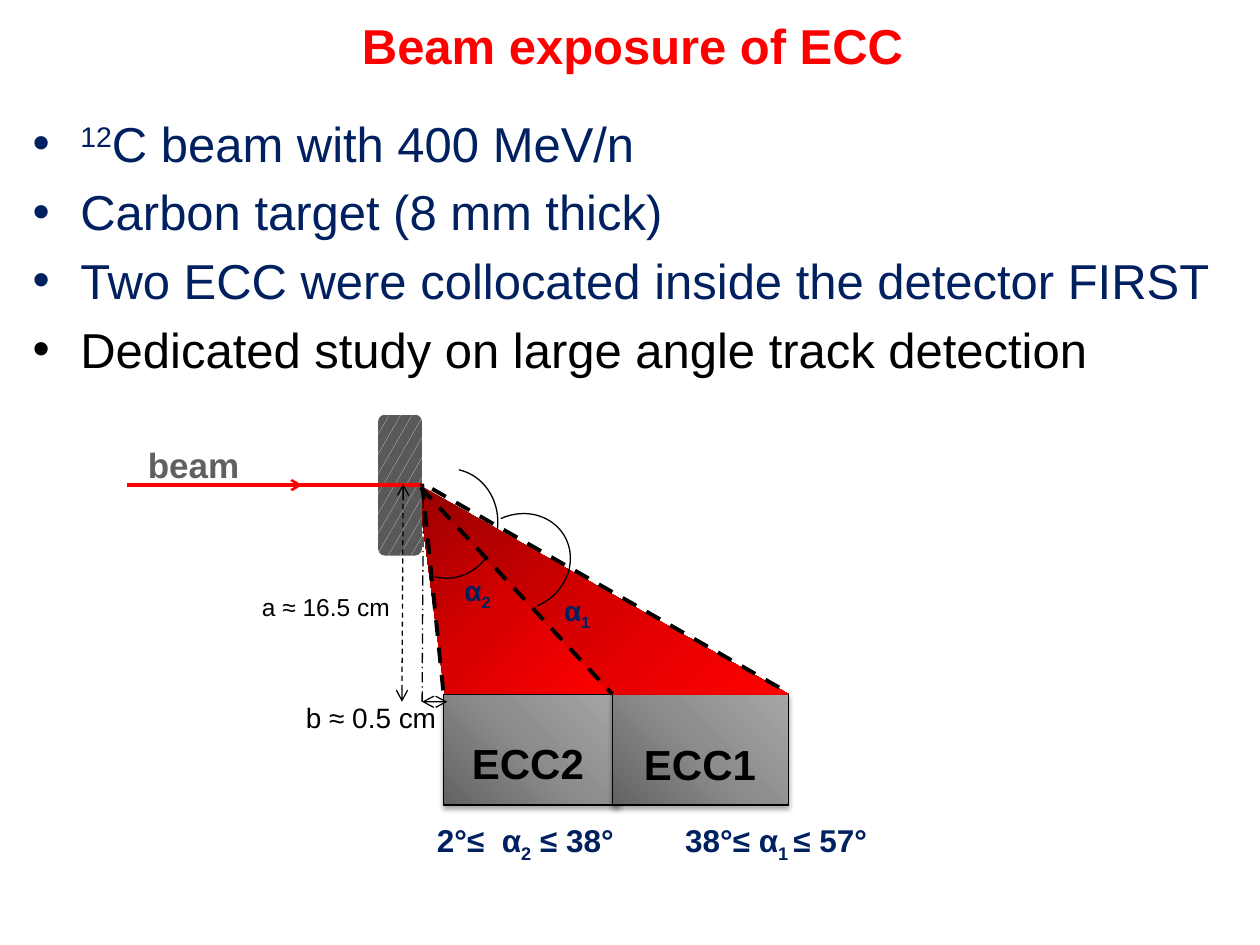
from lxml import etree
from pptx import Presentation
from pptx.dml.color import RGBColor
from pptx.enum.dml import MSO_LINE, MSO_PATTERN
from pptx.enum.shapes import MSO_CONNECTOR, MSO_SHAPE
from pptx.enum.text import MSO_ANCHOR, MSO_AUTO_SIZE, PP_ALIGN
from pptx.oxml import parse_xml
from pptx.oxml.ns import nsdecls, qn
from pptx.util import Inches, Pt

RED = RGBColor(0xFF, 0x00, 0x00)
NAVY = RGBColor(0x00, 0x20, 0x60)
BLACK = RGBColor(0x00, 0x00, 0x00)
LABEL_GRAY = RGBColor(0x60, 0x60, 0x60)
TARGET_DARK = RGBColor(0x59, 0x59, 0x59)
TARGET_LIGHT = RGBColor(0xD9, 0xD9, 0xD9)
RED_STOPS = (RGBColor(0x97, 0, 0), RGBColor(0xD7, 0, 0), RED)
GRAY_STOPS = tuple(RGBColor(v, v, v) for v in (0x62, 0x8C, 0xA6))

DIAGONAL = '<a:lin ang="2700000" scaled="0"/>'
UPWARD = '<a:lin ang="18900000" scaled="0"/>'
FROM_CORNER = '<a:path path="circle"><a:fillToRect r="100000" b="100000"/></a:path>'


class Diagram:
    font = "Arial"

    def __init__(self, slide):
        self.slide = slide
        self.shapes = slide.shapes

    def add_runs(self, p, runs, size, color, bold=False):
        """Add runs given as (text, baseline shift in percent)."""
        for text, shift in runs:
            r = p.add_run()
            r.text = text
            r.font.name, r.font.size, r.font.bold = self.font, Pt(size), bold
            r.font.color.rgb = color
            if shift:
                r._r.get_or_add_rPr().set("baseline", str(shift * 1000))

    def title(self, box, text):
        sp = self.shapes.title
        sp.left, sp.top, sp.width, sp.height = map(Inches, box)
        sp.text_frame.vertical_anchor = MSO_ANCHOR.MIDDLE
        p = sp.text_frame.paragraphs[0]
        p.alignment = PP_ALIGN.CENTER
        self.add_runs(p, [(text, 0)], 28, RED, True)

    def bullets(self, box, items, size=28):
        tf = self.shapes.add_textbox(*map(Inches, box)).text_frame
        tf.word_wrap = True
        for i, (runs, color) in enumerate(items):
            p = tf.add_paragraph() if i else tf.paragraphs[0]
            p.space_before = Pt(size * 0.2)
            pPr = p._p.get_or_add_pPr()
            pPr.set("marL", str(Inches(0.38)))
            pPr.set("indent", str(Inches(-0.38)))
            etree.SubElement(pPr, qn("a:buFont")).set("typeface", self.font)
            etree.SubElement(pPr, qn("a:buChar")).set("char", "•")
            self.add_runs(p, runs, size, color)

    def label(self, box, runs, size, color, bold=True, wrap=False, align=PP_ALIGN.CENTER):
        tf = self.shapes.add_textbox(*map(Inches, box)).text_frame
        tf.word_wrap = wrap
        tf.auto_size = MSO_AUTO_SIZE.SHAPE_TO_FIT_TEXT
        p = tf.paragraphs[0]
        p.alignment = align
        self.add_runs(p, runs, size, color, bold)

    def gradient(self, sp, stops, direction):
        sp.fill.solid()
        gs = "".join(f'<a:gs pos="{i * 50000}"><a:srgbClr val="{c}"/></a:gs>'
                     for i, c in enumerate(stops))
        grad = parse_xml(f'<a:gradFill {nsdecls("a")} rotWithShape="1">'
                         f'<a:gsLst>{gs}</a:gsLst>{direction}</a:gradFill>')
        spPr = sp._element.spPr
        spPr.replace(spPr.find(qn("a:solidFill")), grad)

    def shape(self, kind, box):
        sp = self.shapes.add_shape(kind, *map(Inches, box))
        sp.shadow.inherit = False
        return sp

    def outline(self, sp, width=0.75):
        sp.line.color.rgb = BLACK
        sp.line.width = Pt(width)

    def brick(self, box):
        sp = self.shape(MSO_SHAPE.RECTANGLE, box)
        self.gradient(sp, GRAY_STOPS, UPWARD)
        self.outline(sp)
        sp._element.spPr.find(qn("a:effectLst")).append(parse_xml(
            f'<a:outerShdw {nsdecls("a")} blurRad="{Pt(3.1)}" dist="{Pt(1.8)}" dir="5400000"'
            ' rotWithShape="0"><a:srgbClr val="000000"><a:alpha val="35000"/></a:srgbClr>'
            '</a:outerShdw>'))

    def target(self, box):
        sp = self.shape(MSO_SHAPE.ROUNDED_RECTANGLE, box)
        sp.fill.patterned()
        sp.fill.pattern = MSO_PATTERN.SMALL_CONFETTI
        sp.fill.fore_color.rgb = TARGET_LIGHT
        sp.fill.back_color.rgb = TARGET_DARK
        sp.line.fill.background()
        return sp

    def arc(self, box, rotation, start, end):
        sp = self.shape(MSO_SHAPE.ARC, box)
        sp.rotation = rotation
        # angles are stored in 1/60000 degree, adjustments in 1/100000
        sp.adjustments[0], sp.adjustments[1] = start * 0.6, end * 0.6
        sp.fill.background()
        self.outline(sp)

    def cone(self, points, direction):
        pts = [(Inches(x), Inches(y)) for x, y in points]
        builder = self.shapes.build_freeform(*pts[0])
        builder.add_line_segments(pts[1:], close=True)
        sp = builder.convert_to_shape()
        sp.shadow.inherit = False
        self.gradient(sp, RED_STOPS, direction)
        sp.line.fill.background()

    def line(self, start, end, width=0.75, color=BLACK, dash=None, arrows=()):
        c = self.shapes.add_connector(MSO_CONNECTOR.STRAIGHT, *map(Inches, (*start, *end)))
        c.line.color.rgb = color
        c.line.width = Pt(width)
        if dash:
            c.line.dash_style = dash
        ln = c._element.spPr.find(qn("a:ln"))
        for name in arrows:
            etree.SubElement(ln, qn(f"a:{name}")).set("type", "arrow")
        etree.SubElement(c._element.spPr, qn("a:effectLst"))
        return c


def main():
    prs = Presentation()
    prs.slide_width, prs.slide_height = Inches(10), Inches(7.5)
    d = Diagram(prs.slides.add_slide(prs.slide_layouts[5]))
    both = ("headEnd", "tailEnd")
    brick_top, beam_y = 5.51, 3.85

    d.cone([(3.32, 3.83), (3.33, 3.96), (3.53, brick_top), (4.92, brick_top)], FROM_CORNER)
    d.title((1.46, 0.05, 7.12, 0.61), "Beam exposure of ECC")
    d.bullets((0.16, 0.85, 9.69, 2.13), [
        ([("12", 30), ("C beam with 400 MeV/n", 0)], NAVY),
        ([("Carbon target (8 mm thick)", 0)], NAVY),
        ([("Two ECC were collocated inside the detector FIRST", 0)], NAVY),
        ([("Dedicated study on large angle track detection", 0)], BLACK),
    ])

    # Emulsion bricks and their angular ranges
    for left, name, name_box in ((3.52, "ECC2", (3.51, 5.8, 1.36, 0.52)),
                                 (4.86, "ECC1", (4.95, 5.81, 1.21, 0.5))):
        d.brick((left, brick_top, 1.4, 0.88))
        d.label(name_box, [(name, 0)], 24, BLACK, wrap=True)
    d.label((3.17, 6.47, 2, 0.4), [("2°≤  α", 0), ("2", -25), (" ≤ 38°", 0)],
            18, NAVY, wrap=True)
    d.label((5.14, 6.47, 2.04, 0.4), [("38°≤ α", 0), ("1 ", -25), ("≤ 57°", 0)],
            18, NAVY, wrap=True)

    # Beam on target
    d.label((1.07, 3.47, 1.01, 0.44), [("beam ", 0)], 20, LABEL_GRAY)
    target = d.target((3, 3.29, 0.35, 1.12))
    d.line((1.13, beam_y), (2.4, beam_y), 1.5, RED, arrows=("tailEnd",))
    beam = d.line((1.01, beam_y), (3.35, beam_y), 2.25, RED)
    beam.end_connect(target, 3)

    # Distances and outer edges of the cone
    d.line((3.35, 5.57), (3.36, 3.91), dash=MSO_LINE.LONG_DASH_DOT)
    d.line((3.35, 3.84), (3.52, 5.5), 2.25, dash=MSO_LINE.DASH)
    d.line((3.2, 3.84), (3.19, 5.57), dash=MSO_LINE.DASH, arrows=both)
    d.label((1.98, 4.65, 1.22, 0.34), [("a ≈ 16.5 cm", 0)], 14, BLACK, False,
            align=PP_ALIGN.LEFT)
    d.line((3.55, 5.57), (3.35, 5.57), dash=MSO_LINE.DASH, arrows=both)
    d.label((2.33, 5.51, 1.25, 0.37), [("b ≈ 0.5 cm", 0)], 16, BLACK, False,
            align=PP_ALIGN.LEFT)

    # Angles
    d.arc((3.12, 3.76, 0.87, 0.79), 97.3, 184.19, 6.46)
    d.label((3.58, 4.5, 0.42, 0.37), [("α", 0), ("2", -25)], 16, NAVY)
    d.cone([(3.33, 3.85), (6.26, brick_top), (4.85, brick_top)], DIAGONAL)
    d.line((3.43, 3.88), (6.26, 5.5), 2.25, dash=MSO_LINE.DASH)
    d.arc((3.75, 4.05, 0.75, 0.82), 60.6, 185.82, 7.39)
    d.label((4.37, 4.66, 0.42, 0.37), [("α", 0), ("1", -25)], 16, NAVY)
    d.line((3.34, 3.87), (4.86, brick_top), 2.25, dash=MSO_LINE.DASH)

    prs.save("out.pptx")


if __name__ == "__main__":
    main()
